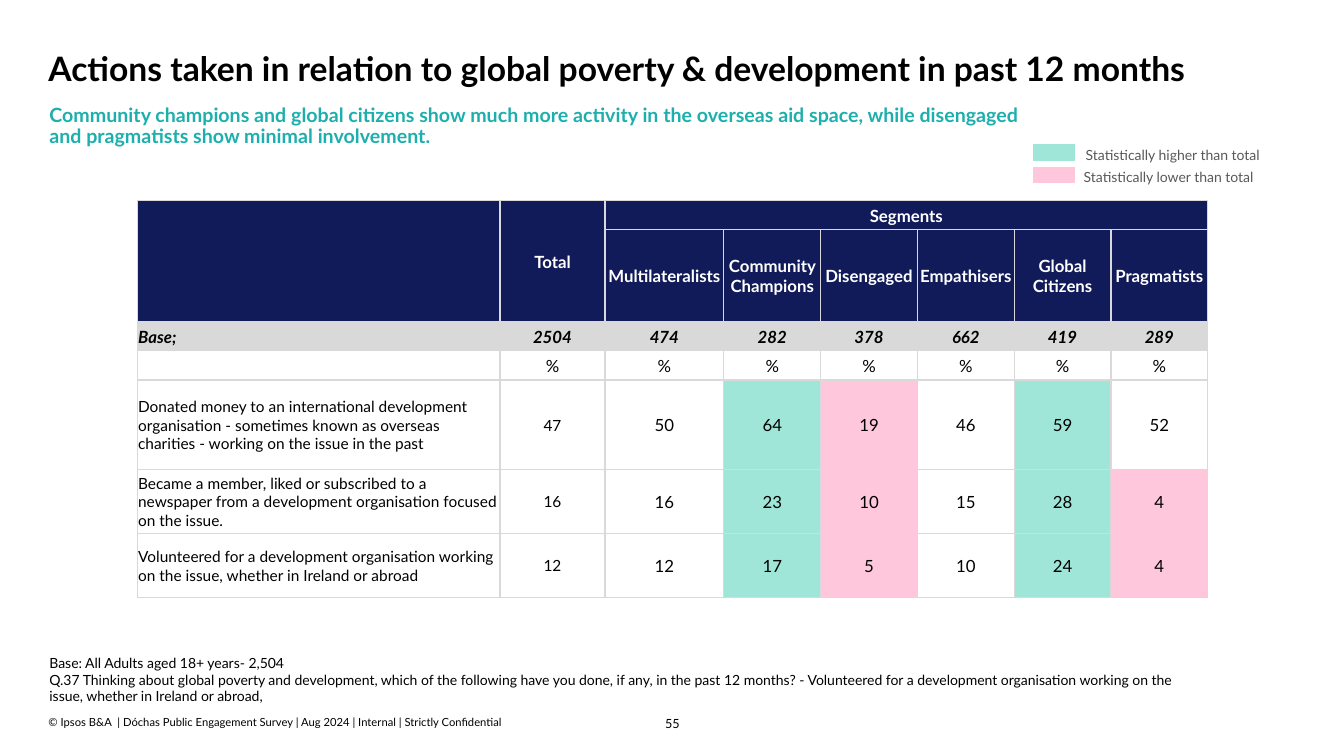
from lxml.etree import SubElement
from pptx import Presentation
from pptx.dml.color import RGBColor
from pptx.enum.shapes import MSO_SHAPE
from pptx.enum.text import MSO_ANCHOR, PP_ALIGN
from pptx.oxml.ns import qn
from pptx.util import Inches, Pt

FONT = "Lato"
BLACK = RGBColor(0x00, 0x00, 0x00)
WHITE = RGBColor(0xFF, 0xFF, 0xFF)
NAVY = RGBColor(0x12, 0x1B, 0x5A)
TEAL = RGBColor(0x1D, 0xAF, 0xAD)
GREY = RGBColor(0xD9, 0xD9, 0xD9)
DARK_GREY = RGBColor(0x59, 0x59, 0x59)
MINT = RGBColor(0x9F, 0xE5, 0xD8)
PINK = RGBColor(0xFF, 0xC7, 0xDC)

# Content
TITLE = "Actions taken in relation to global poverty & development in past 12 months"
SUBTITLE = ("Community champions and global citizens show much more activity in the "
            "overseas aid space, while disengaged and pragmatists show minimal involvement.")
NOTES_ON_BASE = (
    "Base: All Adults aged 18+ years- 2,504\n"
    "Q.37 Thinking about global poverty and development, which of the following have you "
    "done, if any, in the past 12 months? - Volunteered for a development organisation "
    "working on the issue, whether in Ireland or abroad,")
FOOTER = ("© Ipsos B&A  | Dóchas Public Engagement Survey | Aug 2024 | Internal | "
          "Strictly Confidential")
PAGE_NUMBER = "55"
ROWS = [
    ["", "Total", "Segments", "", "", "", "", ""],
    ["", "", "Multilateralists", "Community Champions", "Disengaged", "Empathisers",
     "Global Citizens", "Pragmatists"],
    ["Base;", 2504, 474, 282, 378, 662, 419, 289],
    [""] + ["%"] * 7,
    ["Donated money to an international development organisation - sometimes known as "
     "overseas charities - working on the issue in the past", 47, 50, 64, 19, 46, 59, 52],
    ["Became a member, liked or subscribed to a newspaper from a development organisation "
     "focused on the issue.", 16, 16, 23, 10, 15, 28, 4],
    ["Volunteered for a development organisation working on the issue, whether in Ireland "
     "or abroad", 12, 12, 17, 5, 10, 24, 4],
]
# One letter per cell: navy, grey, white, higher, lower
FILLS = ["NNNNNNNN", "NNNNNNNN", "GGGGGGGG", "WWWWWWWW", "WWWHLWHW", "WWWHLWHL", "WWWHLWHL"]
FILL_COLOURS = {"N": NAVY, "G": GREY, "W": WHITE, "H": MINT, "L": PINK}
COLUMN_WIDTHS = [3.6, 1.04, 1.18] + [0.96] * 5
ROW_HEIGHTS = [0.29, 0.91, 0.29, 0.29, 0.89, 0.63, 0.64]
MERGES = [(0, 0, 1, 0), (0, 1, 1, 1), (0, 2, 0, 7)]
# Label, swatch colour, swatch top and height, text left and top
LEGEND = [
    ("Statistically higher than total", MINT, 1.42, 0.18, 10.67, 1.4),
    ("Statistically lower than total", PINK, 1.65, 0.17, 10.65, 1.62),
]


def style_text(frame, size, colour, bold=False, italic=False,
               align=PP_ALIGN.LEFT, spacing=1.0):
    for paragraph in frame.paragraphs:
        paragraph.alignment = align
        paragraph.line_spacing = spacing
        for run in paragraph.runs:
            font = run.font
            font.name, font.size, font.bold, font.italic = FONT, Pt(size), bold, italic
            font.color.rgb = colour


def set_margins(target, left, top, right, bottom):
    target.margin_left, target.margin_top = Inches(left), Inches(top)
    target.margin_right, target.margin_bottom = Inches(right), Inches(bottom)


def add_text(slide, text, box, size, colour, margins=(0, 0, 0, 0),
             anchor=MSO_ANCHOR.TOP, **style):
    frame = slide.shapes.add_textbox(*map(Inches, box)).text_frame
    frame.word_wrap = True
    frame.vertical_anchor = anchor
    set_margins(frame, *margins)
    frame.text = text
    style_text(frame, size, colour, **style)


def add_borders(cell):
    properties = cell._tc.get_or_add_tcPr()
    for side in ("a:lnL", "a:lnR", "a:lnT", "a:lnB"):
        line = SubElement(properties, qn(side), w=str(Pt(1)))
        fill = SubElement(line, qn("a:solidFill"))
        SubElement(fill, qn("a:srgbClr"), val=str(GREY))


def fill_cell(cell, row, column):
    text = str(ROWS[row][column])
    cell.vertical_anchor = MSO_ANCHOR.MIDDLE
    set_margins(cell, 0.01, 0.01, 0.01, 0)
    add_borders(cell)
    cell.fill.solid()
    cell.fill.fore_color.rgb = FILL_COLOURS[FILLS[row][column]]
    if text:
        cell.text_frame.text = text
        style_text(cell.text_frame,
                   size=11 if row > 3 and column < 2 else 12,
                   colour=WHITE if row < 2 else BLACK,
                   bold=row < 3, italic=row == 2,
                   align=PP_ALIGN.CENTER if column else PP_ALIGN.LEFT)
    else:
        # Keep empty cells from stretching their row
        SubElement(cell.text_frame.paragraphs[0]._p, qn("a:endParaRPr"), sz="1200")


def add_results_table(slide):
    box = (1.36, 1.99, sum(COLUMN_WIDTHS), sum(ROW_HEIGHTS))
    table = slide.shapes.add_table(len(ROWS), len(COLUMN_WIDTHS), *map(Inches, box)).table
    table.first_row = table.horz_banding = False
    for column, width in zip(table.columns, COLUMN_WIDTHS):
        column.width = Inches(width)
    for row, height in zip(table.rows, ROW_HEIGHTS):
        row.height = Inches(height)
    for row in range(len(ROWS)):
        for column in range(len(COLUMN_WIDTHS)):
            fill_cell(table.cell(row, column), row, column)
    for top, left, bottom, right in MERGES:
        table.cell(top, left).merge(table.cell(bottom, right))


def add_legend(slide):
    for label, colour, top, height, text_left, text_top in LEGEND:
        swatch = slide.shapes.add_shape(
            MSO_SHAPE.RECTANGLE, Inches(10.24), Inches(top), Inches(0.43), Inches(height))
        swatch.shadow.inherit = False
        swatch.fill.solid()
        swatch.fill.fore_color.rgb = colour
        swatch.line.color.rgb = WHITE
        swatch.line.width = Pt(1)
        add_text(slide, label, (text_left, text_top, 2.15, 0.27), 10, DARK_GREY,
                 margins=(0.1, 0.05, 0.1, 0.05))


def main():
    presentation = Presentation()
    presentation.slide_width, presentation.slide_height = Inches(13.33), Inches(7.5)
    slide = presentation.slides.add_slide(presentation.slide_layouts[5])

    # Title and subtitle
    title = slide.shapes.title
    title.left, title.top = Inches(0.48), Inches(0.13)
    title.width, title.height = Inches(12.34), Inches(0.78)
    title.text_frame.text = TITLE
    title.text_frame.word_wrap = True
    title.text_frame.vertical_anchor = MSO_ANCHOR.BOTTOM
    set_margins(title.text_frame, 0, 0.05, 0.1, 0.03)
    style_text(title.text_frame, 24, BLACK, bold=True, spacing=0.9)
    add_text(slide, SUBTITLE, (0.49, 1.05, 9.9, 0.71), 14, TEAL, bold=True, spacing=0.9)

    # Results and legend
    add_results_table(slide)
    add_legend(slide)

    # Base, question and footer
    add_text(slide, NOTES_ON_BASE, (0.49, 6.49, 11.34, 0.38), 10, BLACK)
    add_text(slide, FOOTER, (0.48, 7.1, 6.1, 0.13), 8, BLACK, anchor=MSO_ANCHOR.BOTTOM)
    add_text(slide, PAGE_NUMBER, (6.4, 7.09, 0.54, 0.15), 9, BLACK,
             align=PP_ALIGN.CENTER, spacing=1.1)

    presentation.save("out.pptx")


if __name__ == "__main__":
    main()
